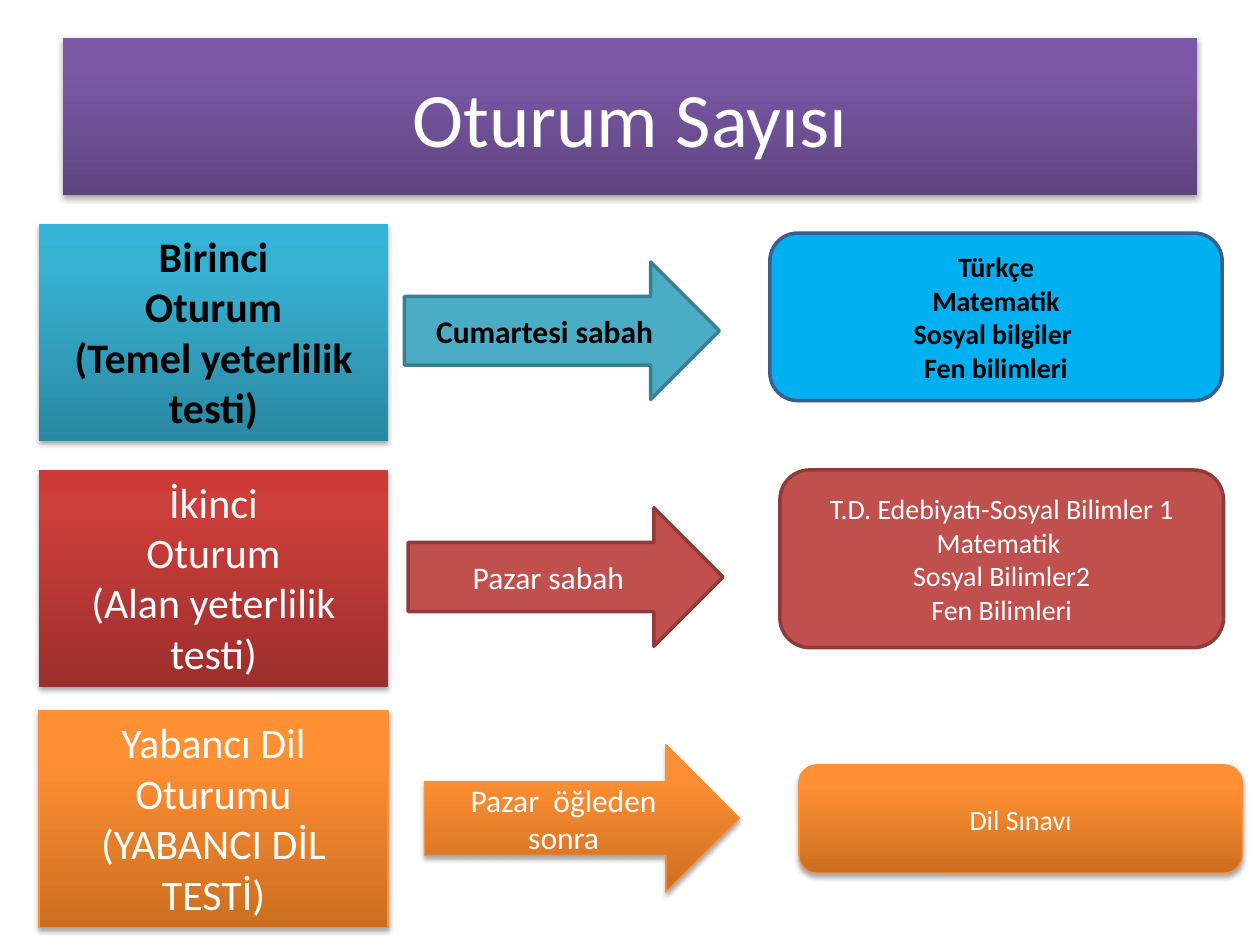
import copy

import pptx
import pptx.dml.color
import pptx.enum.shapes
import pptx.enum.text
import pptx.util
from lxml import etree
from pptx.oxml.ns import qn

SHAPE = pptx.enum.shapes.MSO_SHAPE
ANCHOR = pptx.enum.text.MSO_ANCHOR
AUTO = pptx.enum.text.MSO_AUTO_SIZE
WIDTH, HEIGHT = pptx.util.Inches(10), pptx.util.Inches(7.5)
UNIT = WIDTH / 100  # grid module: one hundredth of the slide's width

SESSION_X, SESSION_W, SESSION_H = 3.1, 27.7, 17.2
ARROW_W = 25

PURPLE = {"fill": ("5F4480", "7B58A6", "7C57A8")}
TEAL = {"fill": ("2A88A2", "37B1D2", "34B4D6")}
RED = {"fill": ("9C2F2D", "CB3E3A", "CE3B37")}
ORANGE = {"fill": ("CC6E20", "FF9034", "FF9136"), "line": ("F69240", 0.75)}
FLAT_TEAL = {"fill": "4BACC6", "line": ("377F92", 2)}
FLAT_BLUE = {"fill": "00B0F0", "line": ("3A5F8C", 2)}
FLAT_RED = {"fill": "C0504D", "line": ("8E3B39", 2)}

BOLD_BLACK = {"color": "000000", "bold": True}
WHITE = {"color": "FFFFFF", "bold": False}

# Each session: font, then (top, style, lines) of its box,
# (left, top, height, style, text) of its arrow and
# (left, top, width, height, style, lines) of its subjects.
SESSIONS = [
    (BOLD_BLACK,
     (17.8, TEAL, ["Birinci", "Oturum", "(Temel yeterlilik testi)"]),
     (32.1, 20.8, 10.9, FLAT_TEAL, "Cumartesi sabah"),
     (61.1, 18.5, 35.9, 13.3, FLAT_BLUE,
      ["Türkçe", "Matematik", "Sosyal bilgiler ", "Fen bilimleri"])),
    (WHITE,
     (37.3, RED, ["İkinci", "Oturum", "(Alan yeterlilik testi)"]),
     (32.4, 40.3, 11, FLAT_RED, "Pazar sabah"),
     (61.9, 37.3, 35.2, 14.1, FLAT_RED,
      ["T.D. Edebiyatı-Sosyal Bilimler 1", "Matematik ",
       "Sosyal Bilimler2", "Fen Bilimleri"])),
    (WHITE,
     (56.4, ORANGE, ["Yabancı Dil", "Oturumu", "(YABANCI DİL TESTİ)"]),
     (33.7, 59.1, 11.7, ORANGE, "Pazar  öğleden sonra"),
     (63.4, 60.7, 35.2, 8.6, ORANGE, ["Dil Sınavı"])),
]


def rgb(value):
    return pptx.dml.color.RGBColor.from_string(value)


def fill_gradient(sp, colors):
    """Fill from bottom to top with three stops."""
    sp.fill.gradient()
    sp.fill.gradient_angle = 90
    stops = sp._element.spPr.find(".//" + qn("a:gsLst"))
    stops.append(copy.deepcopy(stops[-1]))
    for stop, position, color in zip(sp.fill.gradient_stops, (0, 0.8, 1), colors):
        stop.position = position
        stop.color.rgb = rgb(color)


def add_shadow(sp):
    effects = sp._element.spPr.find(qn("a:effectLst"))
    shadow = etree.SubElement(
        effects, qn("a:outerShdw"), blurRad=str(pptx.util.Pt(3.1)),
        dist=str(pptx.util.Pt(1.8)), dir="5400000", rotWithShape="0")
    color = etree.SubElement(shadow, qn("a:srgbClr"), val="000000")
    etree.SubElement(color, qn("a:alpha"), val="35000")


def apply_style(sp, style):
    """Set fill, line and shadow; only gradient shapes cast a shadow."""
    sp.shadow.inherit = False
    if isinstance(style["fill"], tuple):
        fill_gradient(sp, style["fill"])
        add_shadow(sp)
    else:
        sp.fill.solid()
        sp.fill.fore_color.rgb = rgb(style["fill"])
    if "line" in style:
        color, width = style["line"]
        sp.line.color.rgb = rgb(color)
        sp.line.width = pptx.util.Pt(width)
    else:
        sp.line.fill.background()


def write(sp, lines, size, font, frame):
    tf = sp.text_frame
    settings = {"word_wrap": True, "vertical_anchor": ANCHOR.MIDDLE, **frame}
    for name, value in settings.items():
        setattr(tf, name, value)
    formats = {"name": "Calibri", "size": pptx.util.Pt(size), "bold": font["bold"]}
    for i, line in enumerate(lines):
        p = tf.paragraphs[0] if i == 0 else tf.add_paragraph()
        p.alignment = pptx.enum.text.PP_ALIGN.CENTER
        r = p.add_run()
        r.text = line
        r.font.color.rgb = rgb(font["color"])
        for name, value in formats.items():
            setattr(r.font, name, value)


def add_block(s, kind, box, style, lines, size, font, **frame):
    """Add a styled shape with text; box is in grid units."""
    sp = s.shapes.add_shape(kind, *(round(v * UNIT) for v in box))
    apply_style(sp, style)
    write(sp, lines, size, font, frame)


def add_session(s, font, session, arrow, subjects):
    top, style, lines = session
    add_block(s, SHAPE.RECTANGLE, (SESSION_X, top, SESSION_W, SESSION_H),
              style, lines, 24, font, vertical_anchor=ANCHOR.TOP,
              auto_size=AUTO.SHAPE_TO_FIT_TEXT)
    left, top, height, style, text = arrow
    add_block(s, SHAPE.RIGHT_ARROW, (left, top, ARROW_W, height),
              style, [text], 18, font)
    *box, style, lines = subjects
    add_block(s, SHAPE.ROUNDED_RECTANGLE, box, style, lines, 16, font)


def main():
    prs = pptx.Presentation()
    prs.slide_width, prs.slide_height = WIDTH, HEIGHT
    s = prs.slides.add_slide(prs.slide_layouts[6])
    add_block(s, SHAPE.RECTANGLE, (5, 3, 90, 12.5), PURPLE,
              ["Oturum Sayısı"], 44, WHITE)
    for session in SESSIONS:
        add_session(s, *session)
    prs.save("out.pptx")


if __name__ == "__main__":
    main()
